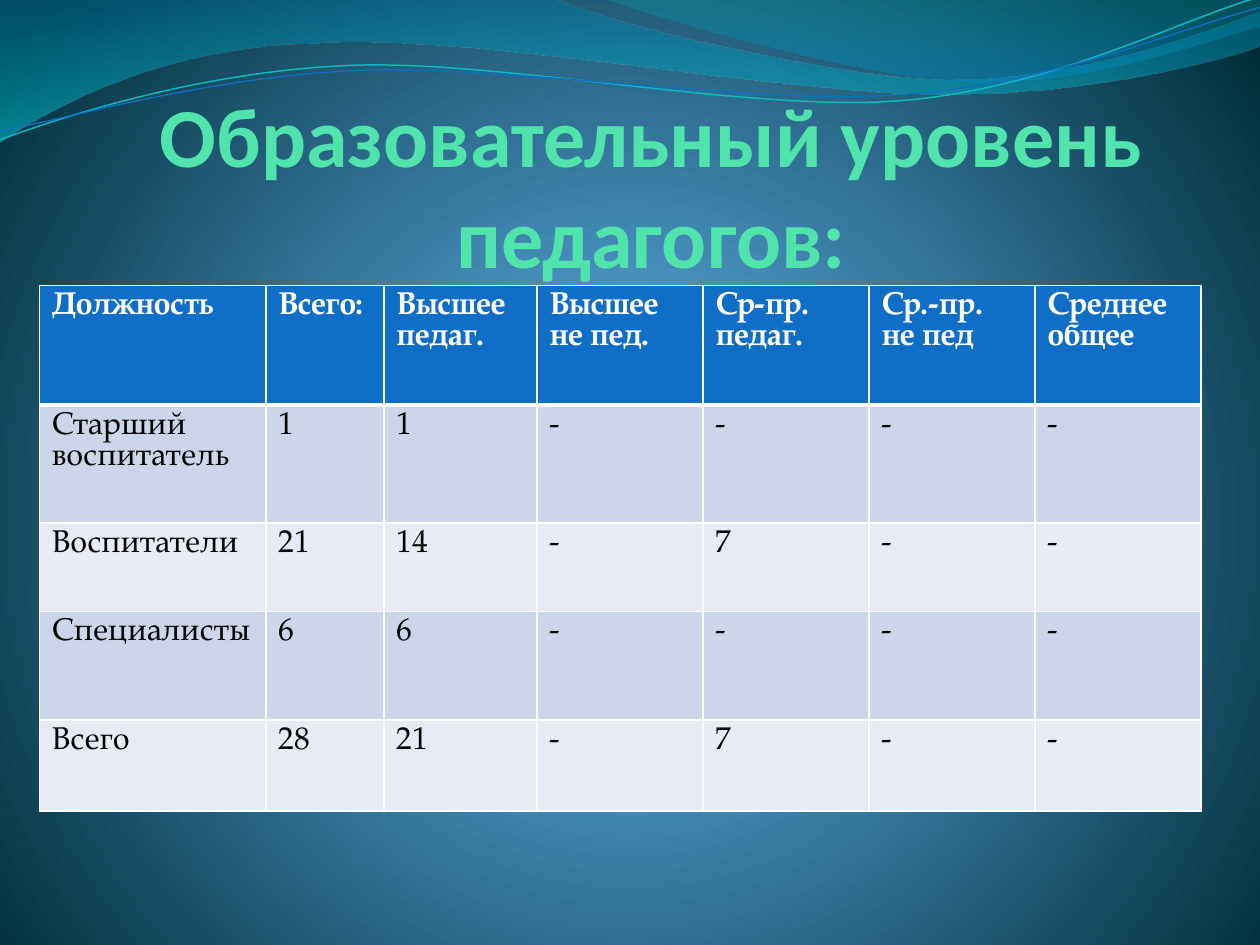
from math import cos, radians, sin

from lxml import etree
from pptx import Presentation
from pptx.dml.color import RGBColor
from pptx.enum.text import MSO_ANCHOR, PP_ALIGN
from pptx.oxml.ns import qn
from pptx.util import Pt

BOTTOM = MSO_ANCHOR.BOTTOM
CENTER = PP_ALIGN.CENTER
TILT = 2.7  # degrees the thin lines are turned to the left


def rgb(value):
    return RGBColor.from_string(value)


def add(parent, tag, **attrs):
    return etree.SubElement(parent, qn(tag), {k: str(v) for k, v in attrs.items()})


def level(values, center):
    """Turn a flat list of x, y values back by TILT around a center."""
    cx, cy = center
    c, s = cos(radians(TILT)), sin(radians(TILT))
    turned = []
    for x, y in zip(values[::2], values[1::2]):
        dx, dy = x - cx, y - cy
        turned += [cx + dx * c - dy * s, cy + dx * s + dy * c]
    return turned


def set_gradient(fill, parent, stops, angle=None, focus=None):
    """Put a gradient of (position, colour, opacity) stops on a fill's parent."""
    fill.solid()
    grad = etree.Element(qn("a:gradFill"), rotWithShape="1")
    stop_list = add(grad, "a:gsLst")
    for pos, color, opacity in stops:
        clr = add(add(stop_list, "a:gs", pos=pos * 1000), "a:srgbClr", val=color)
        if opacity < 100:
            add(clr, "a:alpha", val=opacity * 1000)
    if focus:
        rect = {side: v * 1000 for side, v in zip("ltrb", focus)}
        add(add(grad, "a:path", path="circle"), "a:fillToRect", **rect)
    else:
        add(grad, "a:lin", ang=angle * 60000, scaled=1)
    parent.replace(parent.find(qn("a:solidFill")), grad)


class Deck:
    title_font, body_font = "Calibri", "TeX Gyre Pagella"
    title_color, header, grid = "50E3AC", "0F6FC6", "FFFFFF"
    bands = ("CCD5EA", "E7EBF5")

    def __init__(self, prs):
        self.s = prs.slides.add_slide(prs.slide_layouts[6])

    def background(self, stops, focus):
        fill = self.s.background.fill
        fill.solid()
        parent = self.s.element.find(".//" + qn("p:bgPr"))
        set_gradient(fill, parent, stops, focus=focus)

    def freeform(self, start, segments, close):
        """Segments hold one point (line) or three points (curve)."""
        points = [(Pt(x), Pt(y)) for seg in segments for x, y in zip(seg[::2], seg[1::2])]
        builder = self.s.shapes.build_freeform(Pt(start[0]), Pt(start[1]))
        builder.add_line_segments(points, close=close)
        sp = builder.convert_to_shape()
        sp.shadow.inherit = False
        lines = iter(list(sp.element.iter(qn("a:lnTo"))))
        for seg in segments:
            first = next(lines)
            if len(seg) == 6:
                curve = etree.Element(qn("a:cubicBezTo"))
                first.addprevious(curve)
                for line in (first, next(lines), next(lines)):
                    curve.append(line[0])
                    line.getparent().remove(line)
        return sp

    def wave(self, start, segments, stops):
        sp = self.freeform(start, segments, True)
        set_gradient(sp.fill, sp.element.spPr, stops, angle=90)
        sp.line.fill.background()

    def curve(self, center, start, segments, color, width):
        sp = self.freeform(level(start, center), [level(seg, center) for seg in segments], False)
        sp.rotation = 360 - TILT
        sp.fill.background()
        sp.line.color.rgb = rgb(color)
        sp.line.width = Pt(width)

    def style(self, p, font, size, color, bold):
        for r in p.runs:
            r.font.name, r.font.size, r.font.bold = font, Pt(size), bold
            r.font.color.rgb = rgb(color)

    def title(self, text, x, y, w, h):
        tf = self.s.shapes.add_textbox(Pt(x), Pt(y), Pt(w), Pt(h)).text_frame
        tf.word_wrap = True
        tf.vertical_anchor = BOTTOM
        tf.margin_left = tf.margin_top = tf.margin_right = tf.margin_bottom = 0
        tf.text = text
        p = tf.paragraphs[0]
        p.alignment = CENTER
        self.style(p, self.title_font, 48, self.title_color, True)

    def borders(self, cell, widths):
        tc_pr = cell._tc.get_or_add_tcPr()
        for side, width in zip("LRTB", widths):
            ln = add(tc_pr, "a:ln" + side, w=Pt(width))
            add(add(ln, "a:solidFill"), "a:srgbClr", val=self.grid)

    def table(self, x, y, cols, heights, rows):
        table = self.s.shapes.add_table(len(rows), len(cols), Pt(x), Pt(y),
                                        Pt(sum(cols)), Pt(sum(heights))).table
        for col, width in zip(table.columns, cols):
            col.width = Pt(width)
        for i, (row, height, texts) in enumerate(zip(table.rows, heights, rows)):
            row.height = Pt(height)
            head = i == 0
            for cell, text in zip(row.cells, texts):
                self.borders(cell, (1, 1, 3 if i == 1 else 1, 3 if head else 1))
                cell.fill.solid()
                cell.fill.fore_color.rgb = rgb(self.header if head else self.bands[(i - 1) % 2])
                cell.text = text
                self.style(cell.text_frame.paragraphs[0], self.body_font, 18,
                           "FFFFFF" if head else "000000", head)


def main():
    prs = Presentation()
    prs.slide_width, prs.slide_height = Pt(720), Pt(540)
    deck = Deck(prs)

    # Background glow
    deck.background([(0, "4AA0D6", 100), (25, "4C98C7", 100), (100, "002C38", 100)],
                    (10, 110, 10, 100))

    # Waves along the top
    deck.wave((0, 0), [
        (316.8, -0.7),
        (342.7, 12.2, 478.1, 45.4, 545.8, 45.4),
        (614.2, 45.4, 689.8, 18.7, 720, 6.5),
        (720.7, 25.9),
        (707.8, 31.7, 626.4, 54.7, 537.1, 54),
        (447.8, 54, 275, 20.2, 185, 24.5),
        (92.9, 25.9, 33.1, 59.8, -0.7, 81.4),
        (0, 0),
    ], [(0, "0074A1", 45), (100, "00C6CF", 55)])
    deck.wave((344.9, -0.7), [
        (366.5, 7.9, 491, 44.6, 553.7, 46.8),
        (616.3, 49.7, 691.9, 23, 720, 15.1),
        (720, 0),
        (344.9, -0.7),
    ], [(0, "00A1A9", 30), (80, "008BBF", 45)])

    # Thin lines following the waves
    deck.curve((359.3, 41.4), (0, 79.9), [
        (34.6, 67, 113.8, 41, 199.4, 37.4),
        (284.4, 33.8, 427, 64.1, 513.4, 57.6),
        (599.8, 51.1, 675.4, 10.8, 718.6, -1.4),
    ], "0AB8BF", 0.85)
    deck.curve((359.6, 42.5), (0, 74.9), [
        (33.8, 69.1, 118.1, 43.9, 203.8, 40.3),
        (290.2, 36.7, 429.8, 60.5, 516.2, 54),
        (601.9, 48.2, 677.5, 15.1, 720, 4.3),
    ], "0F6FC6", 0.75)

    # Title
    deck.title("Образовательный уровень педагогов:", 41.5, 44.8, 661.5, 118.2)

    # Table of education levels
    deck.table(22.5, 163.2, [129.5, 67.5, 87.5] + [94.85] * 4, [68.3, 67.5, 50.4, 62, 52], [
        ["Должность", "Всего:", "Высшее педаг.", "Высшее не пед.",
         "Ср-пр. педаг.", "Ср.-пр. не пед", "Среднее общее"],
        ["Старший воспитатель", "1", "1", "-", "-", "-", "-"],
        ["Воспитатели", "21", "14", "-", "7", "-", "-"],
        ["Специалисты", "6", "6", "-", "-", "-", "-"],
        ["Всего", "28", "21", "-", "7", "-", "-"],
    ])

    prs.save("out.pptx")


if __name__ == "__main__":
    main()
